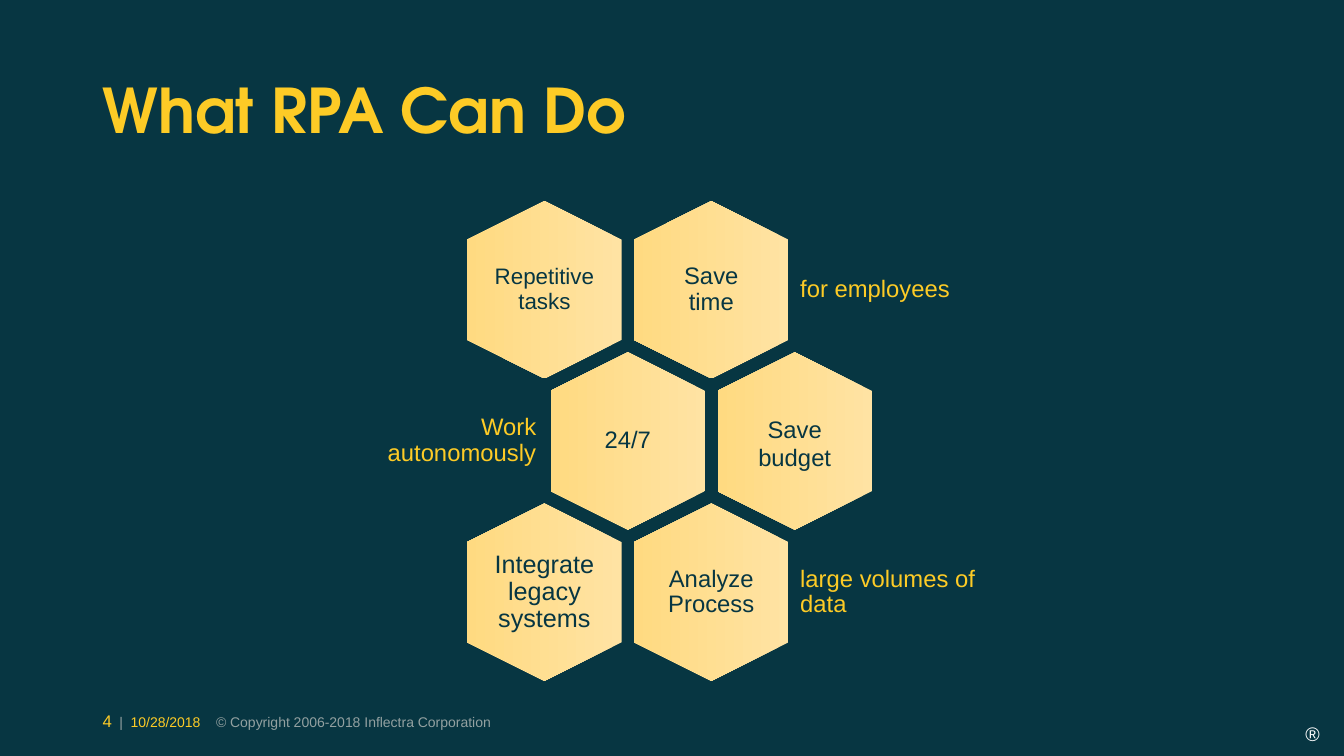
from copy import deepcopy

from pptx import Presentation
from pptx.dml.color import RGBColor
from pptx.enum import shapes, text
from pptx.oxml import ns
from pptx.util import Pt
from lxml import etree

NAVY = RGBColor(0x07, 0x36, 0x42)
GOLD = RGBColor(0xFD, 0xCB, 0x26)
GREY = RGBColor(0x93, 0xA1, 0xA1)
WHITE = RGBColor(0xFF, 0xFF, 0xFF)
PALE = RGBColor(0xFF, 0xE3, 0xA3)
AMBER = RGBColor(0xFF, 0xDA, 0x81)

LEFT, MID, RIGHT = text.PP_ALIGN.LEFT, text.PP_ALIGN.CENTER, text.PP_ALIGN.RIGHT
TOP, CENTER = text.MSO_ANCHOR.TOP, text.MSO_ANCHOR.MIDDLE

# Honeycomb grid: first centre, steps and cell size
LEFT_X, TOP_Y = 388.9, 207
STEP_X, STEP_Y = 119.2, 108
HEX_W, HEX_H = 126.7, 110.2
CELL_W, CELL_H = 76.3, 87.1
SIDE_W, SIDE_H, SIDE_GAP = 142, 76.3, 58.5


def write(para, words, size=17, color=NAVY, font="Arial", bold=False):
    """Add formatted text to a paragraph; a newline becomes a line break."""
    for i, line in enumerate(words.split("\n")):
        if i:
            para.add_line_break()
            para._p[-1].append(deepcopy(run._r.rPr))
        run = para.add_run()
        run.text = line
        run.font.size = Pt(size)
        run.font.name = font
        run.font.bold = bold
        run.font.color.rgb = color


def frame(shape, align=LEFT, anchor=TOP, inset=None, space=1.0, wrap=True):
    """Set up a text frame and return its first paragraph."""
    tf = shape.text_frame
    tf.word_wrap = wrap
    tf.vertical_anchor = anchor
    if inset is not None:
        tf.margin_left = tf.margin_right = Pt(inset)
        tf.margin_top = tf.margin_bottom = Pt(inset)
    para = tf.paragraphs[0]
    para.alignment = align
    para.line_spacing = space
    return para


def box(slide, x, y, w, h, **form):
    return frame(slide.shapes.add_textbox(Pt(x), Pt(y), Pt(w), Pt(h)), **form)


def title(slide, words):
    head = slide.shapes.title
    head.left, head.top = Pt(66.24), Pt(28.8)
    head.width, head.height = Pt(828), Pt(104.4)
    para = frame(head, anchor=CENTER, space=0.9)
    write(para, words, size=44, color=GOLD, font="TeX Gyre Adventor", bold=True)


def spot(row, col):
    """Centre of a cell; the middle row is shifted by half a step."""
    return LEFT_X + (col + row % 2 / 2) * STEP_X, TOP_Y + row * STEP_Y


def cell(slide, row, col, runs, inset):
    x, y = spot(row, col)
    hexa = slide.shapes.add_shape(
        shapes.MSO_SHAPE.HEXAGON,
        Pt(x - HEX_W / 2), Pt(y - HEX_H / 2), Pt(HEX_W), Pt(HEX_H))
    hexa.rotation = 90
    hexa.shadow.inherit = False
    hexa.line.fill.background()
    hexa.fill.gradient()
    hexa.fill.gradient_angle = 270
    for stop, color in zip(hexa.fill.gradient_stops, (PALE, AMBER)):
        stop.color.rgb = color
    para = box(slide, x - CELL_W / 2, y - CELL_H / 2, CELL_W, CELL_H,
               align=MID, anchor=CENTER, inset=inset, space=0.9)
    for words, size in runs:
        write(para, words, size=size)


def side(slide, row, col, words, align=LEFT):
    """Label beside a cell, on its right unless aligned right."""
    x, y = spot(row, col)
    left = x + SIDE_GAP if align == LEFT else x - SIDE_GAP - 2 - SIDE_W
    para = box(slide, left, y - SIDE_H / 2, SIDE_W, SIDE_H,
               align=align, anchor=CENTER, inset=5, space=0.9)
    write(para, words, color=GOLD)


def footer(slide):
    para = box(slide, 66.24, 504, 537.8, 21.6)
    tabs = etree.SubElement(para._p.get_or_add_pPr(), ns.qn("a:tabLst"))
    for pos in (12, 20, 81):
        etree.SubElement(tabs, ns.qn("a:tab"), pos=str(Pt(pos)), algn="l")
    write(para, "4", size=12, color=GOLD)
    write(para, "\t|\t", size=10, color=GREY)
    write(para, "10/28/2018\t", size=10, color=GOLD)
    write(para, "© Copyright 2006-2018 Inflectra Corporation", size=10, color=GREY)
    # Registered mark in the corner
    mark = box(slide, 932.4, 515.5, 13, 17.3, inset=0, wrap=False)
    write(mark, "®", size=14, color=WHITE)


def main():
    deck = Presentation()
    deck.slide_width, deck.slide_height = Pt(960), Pt(540)
    slide = deck.slides.add_slide(deck.slide_layouts[5])
    slide.background.fill.solid()
    slide.background.fill.fore_color.rgb = NAVY

    footer(slide)
    title(slide, "What RPA Can Do")

    # Honeycomb: row, column, runs with sizes, inset
    cells = [
        (0, 1, [("Save time", 17)], 5),
        (0, 0, [("Repetitive\ntasks", 16)], 0),
        (1, 0, [("24/7", 17)], 5),
        (1, 1, [("Save", 17), (" ", 23), ("budget", 17)], 0),
        (2, 1, [("Analyze\nProcess", 17)], 5),
        (2, 0, [("Integrate legacy systems", 18)], 0),
    ]
    for item in cells:
        cell(slide, *item)

    # Side labels
    side(slide, 0, 1, "for employees")
    side(slide, 1, 0, "Work autonomously", align=RIGHT)
    side(slide, 2, 1, "large volumes of data")

    deck.save("out.pptx")


if __name__ == "__main__":
    main()
